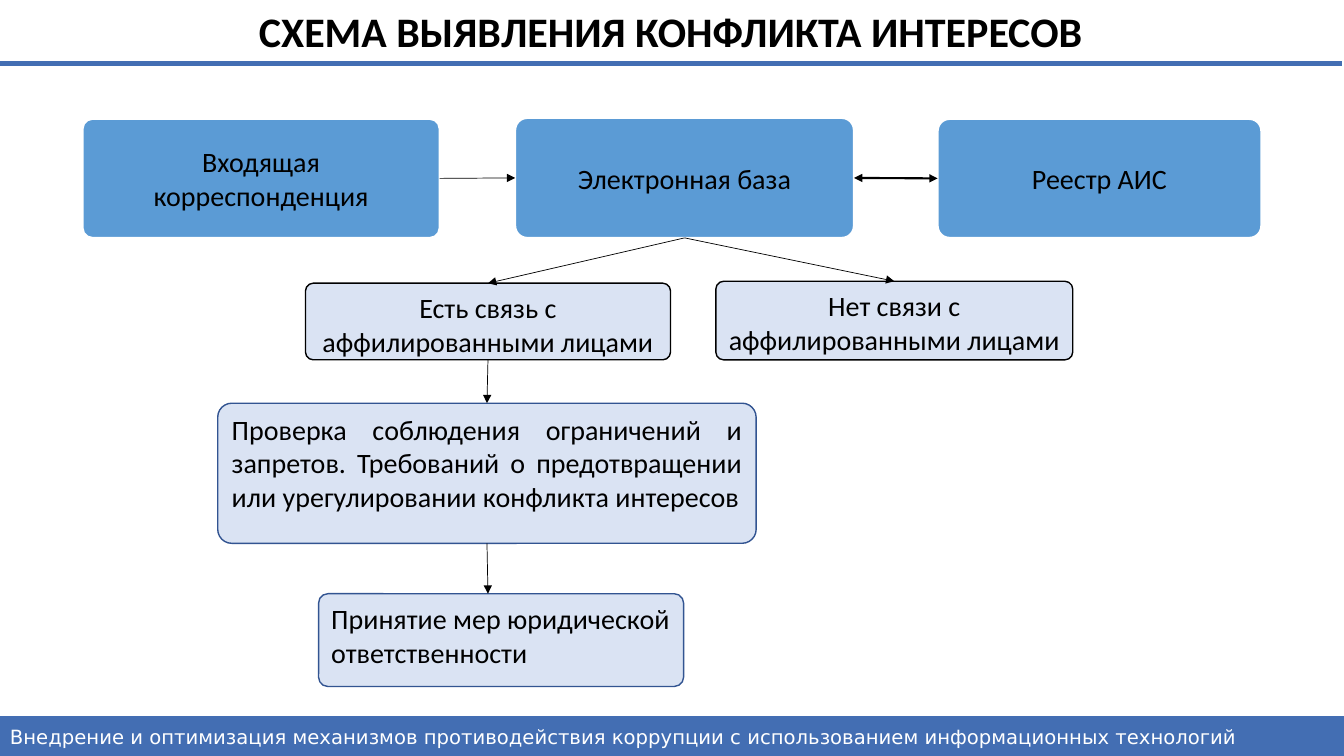
import pptx
import pptx.util
import pptx.dml.color
import pptx.enum.shapes
import pptx.enum.text
import pptx.oxml
import pptx.oxml.ns
import lxml.etree

Inches = pptx.util.Inches
Pt = pptx.util.Pt
RGBColor = pptx.dml.color.RGBColor
Shape = pptx.enum.shapes.MSO_SHAPE
Align = pptx.enum.text.PP_ALIGN
Anchor = pptx.enum.text.MSO_ANCHOR

BLACK = RGBColor(0x00, 0x00, 0x00)
WHITE = RGBColor(0xFF, 0xFF, 0xFF)
BAND = RGBColor(0x43, 0x6E, 0xB3)
BLUE = RGBColor(0x5B, 0x9B, 0xD5)
PALE = RGBColor(0xDA, 0xE3, 0xF3)
NAVY = RGBColor(0x32, 0x54, 0x91)

TITLE = "СХЕМА ВЫЯВЛЕНИЯ КОНФЛИКТА ИНТЕРЕСОВ"
FOOTER = ("Внедрение и оптимизация механизмов противодействия коррупции "
          "с использованием информационных технологий")

# style: fill, line, line width, anchor
STYLES = {
    "source": (BLUE, WHITE, 1.5, Anchor.MIDDLE),
    "result": (PALE, BLACK, 1, Anchor.TOP),
    "action": (PALE, NAVY, 1, Anchor.TOP),
}
# name: text, style, alignment, corner, (left, top, width, height)
BOXES = {
    "mail": ("Входящая корреспонденция", "source", Align.CENTER, 0.08,
             (0.82, 1.18, 3.54, 1.18)),
    "base": ("Электронная база", "source", Align.CENTER, 0.1,
             (5.11, 1.17, 3.36, 1.19)),
    "list": ("Реестр АИС", "source", Align.CENTER, 0.1,
             (9.3, 1.18, 3.21, 1.18)),
    "tie": ("Есть связь с аффилированными лицами", "result", Align.CENTER, 0.1,
            (3.03, 2.81, 3.62, 0.76)),
    "free": ("Нет связи с аффилированными лицами", "result", Align.CENTER, 0.1,
             (7.1, 2.79, 3.54, 0.78)),
    "check": ("Проверка соблюдения ограничений и запретов. Требований о "
              "предотвращении или урегулировании конфликта интересов",
              "action", Align.JUSTIFY, 0.1, (2.16, 4, 5.34, 1.39)),
    "act": ("Принятие мер юридической ответственности", "action", Align.LEFT,
            0.1, (3.16, 5.89, 3.62, 0.92)),
}
TOP, LEFT, BOTTOM, RIGHT = range(4)
# from, side, to, side, width, ends with an arrowhead
LINKS = [
    ("mail", RIGHT, "base", LEFT, 0.5, ["tailEnd"]),
    ("base", RIGHT, "list", LEFT, 1.5, ["headEnd", "tailEnd"]),
    ("base", BOTTOM, "tie", TOP, 0.5, ["tailEnd"]),
    ("base", BOTTOM, "free", TOP, 0.5, ["tailEnd"]),
    ("tie", BOTTOM, "check", TOP, 0.5, ["tailEnd"]),
]


def write(shape, text, size, color, align, anchor, font="Calibri", bold=False):
    frame = shape.text_frame
    frame.word_wrap = True
    frame.vertical_anchor = anchor
    par = frame.paragraphs[0]
    par.alignment = align
    run = par.add_run()
    run.text = text
    run.font.name = font
    run.font.size = Pt(size)
    run.font.bold = bold
    run.font.color.rgb = color
    return par


def panel(kind, place, fill, line, width):
    shape = slide.shapes.add_shape(kind, *map(Inches, place))
    shape.shadow.inherit = False
    shape.fill.solid()
    shape.fill.fore_color.rgb = fill
    shape.line.color.rgb = line
    shape.line.width = Pt(width)
    return shape


def join(start, end, color, width, heads=()):
    link = slide.shapes.add_connector(
        pptx.enum.shapes.MSO_CONNECTOR.STRAIGHT, *map(Inches, start + end))
    link.line.color.rgb = color
    link.line.width = Pt(width)
    qn = pptx.oxml.ns.qn
    props = link._element.spPr
    for head in heads:
        lxml.etree.SubElement(props.find(qn("a:ln")), qn("a:" + head),
                              type="triangle")
    lxml.etree.SubElement(props, qn("a:effectLst"))
    return link


deck = pptx.Presentation()
deck.slide_width = Inches(13.33)
deck.slide_height = Inches(7.5)
slide = deck.slides.add_slide(deck.slide_layouts[5])

title = slide.shapes.title
title.left, title.top, title.width, title.height = map(
    Inches, (0, 0, 13.31, 0.61))
write(title, TITLE, 30, BLACK, Align.CENTER, Anchor.TOP, bold=True)
title.text_frame.auto_size = pptx.enum.text.MSO_AUTO_SIZE.NONE
join((0, 0.63), (13.31, 0.63), BAND, 3)

foot = panel(Shape.RECTANGLE, (0, 7.11, 13.35, 0.39), BAND, BAND, 1)
par = write(foot, FOOTER, 14, WHITE, Align.LEFT, Anchor.MIDDLE, "DejaVu Sans")
par.space_after = Pt(4)

nodes = {}
for name, (text, style, align, corner, place) in BOXES.items():
    fill, line, width, anchor = STYLES[style]
    box = panel(Shape.ROUNDED_RECTANGLE, place, fill, line, width)
    box.adjustments[0] = corner
    write(box, text, 20, BLACK, align, anchor)
    nodes[name] = box

for first, out, last, into, width, heads in LINKS:
    link = join((0, 0), (0, 0), BLACK, width, heads)
    link.begin_connect(nodes[first], out)
    link.end_connect(nodes[last], into)

# The last box sits off the axis of the column, so its arrow is placed freely
join((4.83, 5.39), (4.84, 5.89), BLACK, 0.5, ["tailEnd"])

deck.save("out.pptx")
